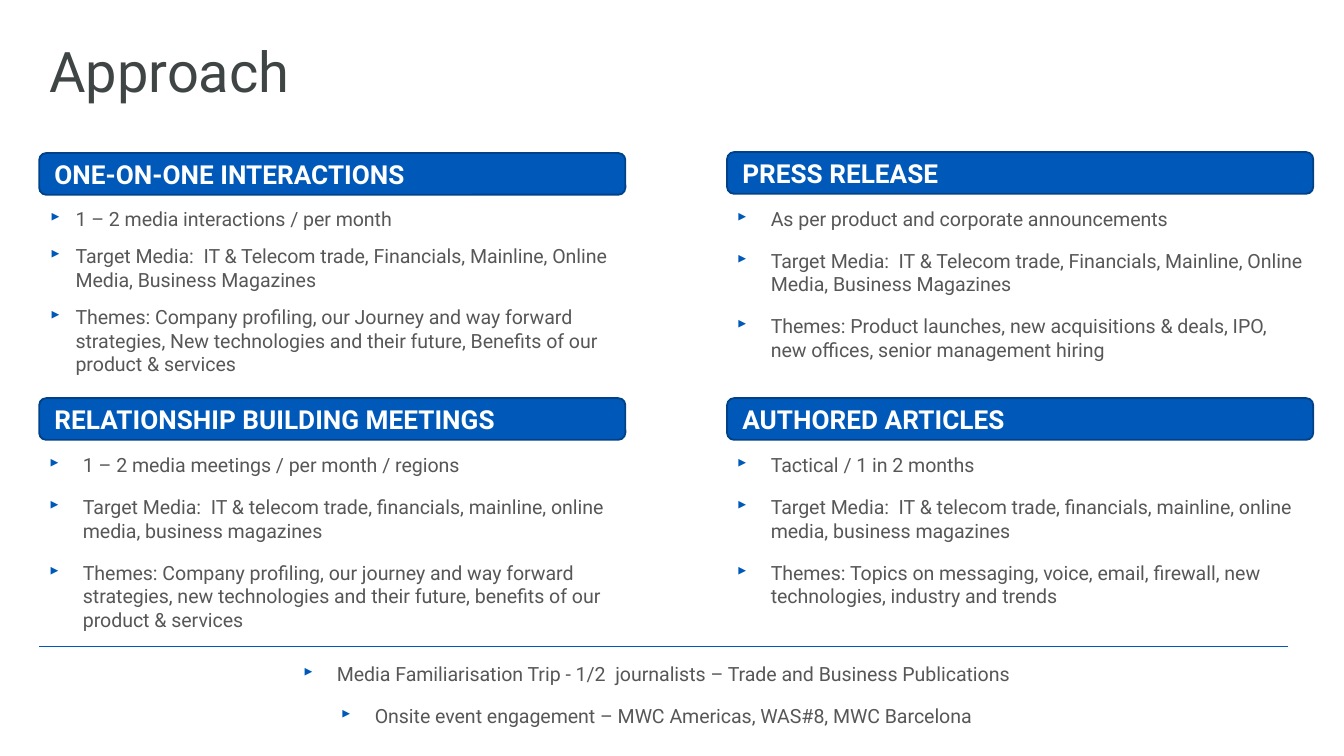
from lxml.etree import SubElement
from pptx import Presentation
from pptx.dml.color import RGBColor
from pptx.enum.shapes import MSO_CONNECTOR, MSO_SHAPE
from pptx.enum.text import MSO_ANCHOR as Anchor, PP_ALIGN as Align
from pptx.oxml.ns import qn
from pptx.util import Pt

# Content
TITLE = "Approach"
SECTIONS = [  # heading, heading top, text left, text top, indent, space before, bullets
    [("ONE-ON-ONE INTERACTIONS", 82, 21.6, 108, 13.5, 7.5, [
        "1 – 2 media interactions / per month",
        "Target Media:  IT & Telecom trade, Financials, Mainline, Online Media, Business Magazines",
        "Themes: Company profiling, our Journey and way forward strategies, "
        "New technologies and their future, Benefits of our product & services"]),
     ("RELATIONSHIP BUILDING MEETINGS", 213.3, 21, 240, 18, 10, [
         "1 – 2 media meetings / per month / regions",
         "Target Media:  IT & telecom trade, financials, mainline, online media, business magazines",
         "Themes: Company profiling, our journey and way forward strategies, "
         "new technologies and their future, benefits of our product & services"])],
    [("PRESS RELEASE", 81.5, 389.5, 108, 18, 10, [
        "As per product and corporate announcements",
        "Target Media:  IT & Telecom trade, Financials, Mainline, Online Media, Business Magazines",
        "Themes: Product launches, new acquisitions & deals, IPO, new offices, senior management hiring"]),
     ("AUTHORED ARTICLES", 213.3, 389.5, 240, 18, 10, [
         "Tactical / 1 in 2 months",
         "Target Media:  IT & telecom trade, financials, mainline, online media, business magazines",
         "Themes: Topics on messaging, voice, email, firewall, new technologies, industry and trends"])],
]
EVENTS = [
    "Media Familiarisation Trip - 1/2  journalists – Trade and Business Publications",
    "Onsite event engagement – MWC Americas, WAS#8, MWC Barcelona",
]

# Style
COLORS = {"blue": "0059B9", "outline": "004289", "title": "3F4444",
          "body": "575757", "white": "FFFFFF"}
COLUMN_LEFTS = [21, 389.5]
COLUMN_WIDTH, HEADING_HEIGHT, TEXT_HEIGHT = 314, 22.3, 100


def rgb(name):
    return RGBColor.from_string(COLORS[name])


def style(paragraph, size, color, bold=False):
    font = paragraph.font
    font.name, font.size, font.bold = "Roboto", Pt(size), bold
    font.color.rgb = rgb(color)


def add_text_frame(left, top, width, height):
    frame = slide.shapes.add_textbox(Pt(left), Pt(top), Pt(width), Pt(height)).text_frame
    frame.word_wrap = True
    frame.margin_left = frame.margin_right = Pt(5.4)
    frame.margin_top = frame.margin_bottom = Pt(2.7)
    return frame


def add_bullets(frame, lines, indent, space, align=Align.LEFT):
    for index, line in enumerate(lines):
        paragraph = frame.add_paragraph() if index else frame.paragraphs[0]
        paragraph.text = line
        paragraph.alignment = align
        if index:
            paragraph.space_before = Pt(space)
        properties = paragraph._p.get_or_add_pPr()
        properties.set("marL", str(Pt(indent)))
        properties.set("indent", str(-Pt(indent)))
        bullet_color = SubElement(properties, qn("a:buClr"))
        SubElement(bullet_color, qn("a:srgbClr"), val=COLORS["blue"])
        SubElement(properties, qn("a:buSzPct"), val="80000")
        SubElement(properties, qn("a:buChar"), char="▸")
        style(paragraph, 10.5, "body")


def add_heading(text, left, top):
    shape = slide.shapes.add_shape(MSO_SHAPE.ROUNDED_RECTANGLE, Pt(left), Pt(top),
                                   Pt(COLUMN_WIDTH), Pt(HEADING_HEIGHT))
    shape.shadow.inherit = False
    shape.fill.solid()
    shape.fill.fore_color.rgb = rgb("blue")
    shape.line.color.rgb = rgb("outline")
    shape.line.width = Pt(1)
    shape.text_frame.vertical_anchor = Anchor.MIDDLE
    paragraph = shape.text_frame.paragraphs[0]
    paragraph.text = text
    paragraph.alignment = Align.LEFT
    style(paragraph, 14, "white", bold=True)


presentation = Presentation()
presentation.slide_width, presentation.slide_height = Pt(720), Pt(405)
slide = presentation.slides.add_slide(presentation.slide_layouts[6])

# Title
title_frame = add_text_frame(21, 15.8, 509, 48.2)
title_frame.vertical_anchor = Anchor.MIDDLE
title = title_frame.paragraphs[0]
title.text = TITLE
title.line_spacing = 0.9
style(title, 30, "title")

# Four sections in two columns
for column_left, column in zip(COLUMN_LEFTS, SECTIONS):
    for heading, top, text_left, text_top, indent, space, bullets in column:
        add_heading(heading, column_left, top)
        frame = add_text_frame(text_left, text_top, COLUMN_WIDTH, TEXT_HEIGHT)
        add_bullets(frame, bullets, indent, space)

# Divider and events
divider = slide.shapes.add_connector(MSO_CONNECTOR.STRAIGHT, Pt(21), Pt(346.3), Pt(690), Pt(346.3))
divider.line.color.rgb = rgb("blue")
divider.line.width = Pt(0.5)
SubElement(divider._element.spPr, qn("a:effectLst"))
add_bullets(add_text_frame(21, 352, 661.7, 43.2), EVENTS, 18, 10, Align.CENTER)

presentation.save("out.pptx")
